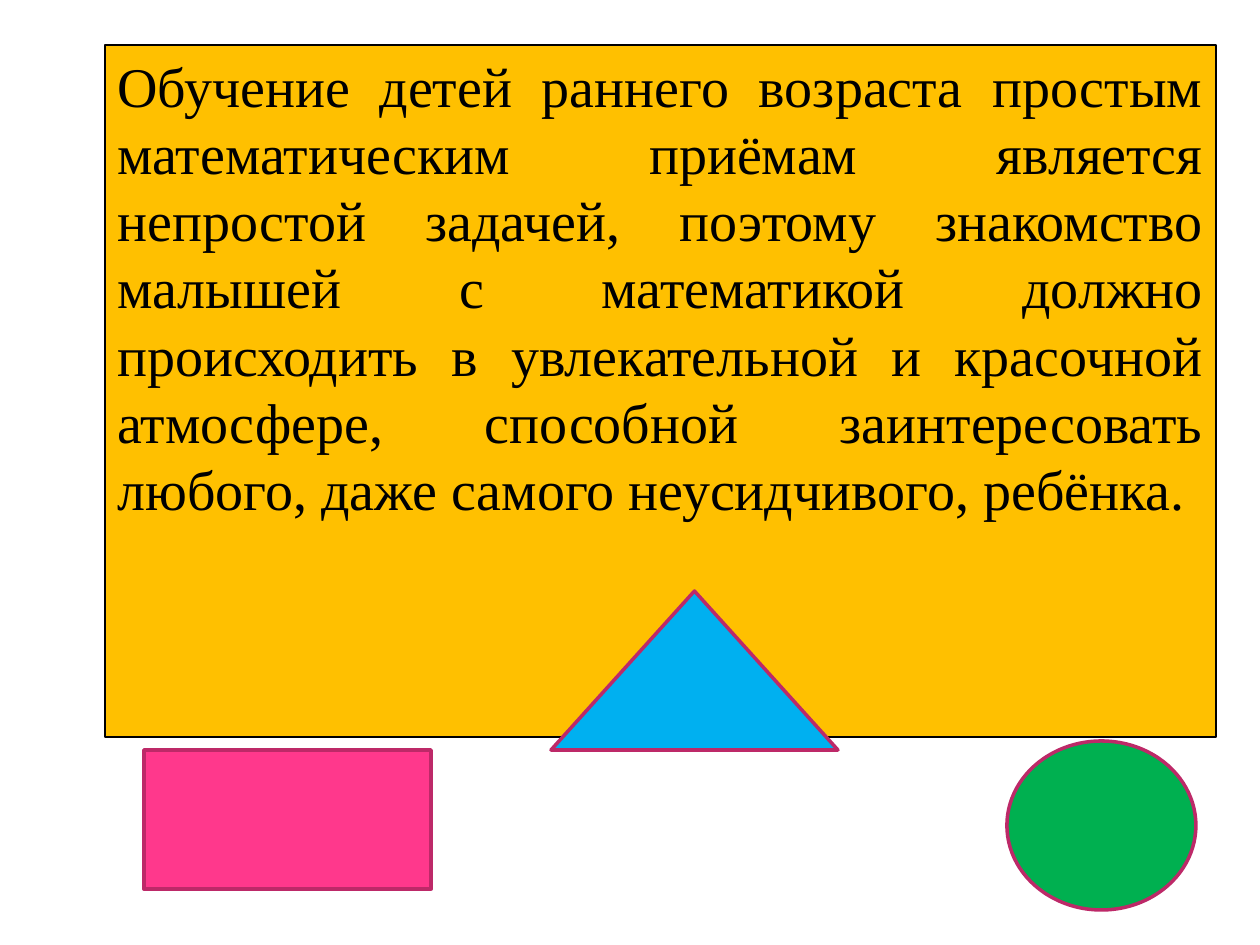
from pptx import Presentation
from pptx.dml.color import RGBColor
from pptx.enum.shapes import MSO_SHAPE
from pptx.enum.text import MSO_ANCHOR, PP_ALIGN
from pptx.util import Emu, Pt

PX = 914400 // 126
RECTANGLE = MSO_SHAPE.RECTANGLE
PROCESS = MSO_SHAPE.FLOWCHART_PROCESS
TRIANGLE = MSO_SHAPE.ISOSCELES_TRIANGLE
OVAL = MSO_SHAPE.OVAL
TOP = MSO_ANCHOR.TOP
JUSTIFY = PP_ALIGN.JUSTIFY

COLORS = {
    "panel": "FFC000",
    "ink": "000000",
    "outline": "BD2968",
    "pink": "FF388C",
    "blue": "00B0F0",
    "green": "00B050",
}
FONT = "Times New Roman"
STATEMENT = (
    "Обучение детей раннего возраста простым математическим приёмам "
    "является непростой задачей, поэтому знакомство малышей с математикой "
    "должно происходить в увлекательной и красочной атмосфере, способной "
    "заинтересовать любого, даже самого неусидчивого, ребёнка."
)
FIGURES = [
    (PROCESS, (144, 750, 287, 139), "pink"),
    (TRIANGLE, (551, 591, 287, 159), "blue"),
    (OVAL, (1007, 741, 189, 169), "green"),
]


def rgb(name):
    return RGBColor.from_string(COLORS[name])


def add_figure(slide, preset, box, fill, line="outline", weight=2):
    figure = slide.shapes.add_shape(preset, *(Emu(n * PX) for n in box))
    figure.shadow.inherit = False
    figure.fill.solid()
    figure.fill.fore_color.rgb = rgb(fill)
    figure.line.color.rgb = rgb(line)
    figure.line.width = Pt(weight)
    return figure


def add_statement(slide, box, text):
    panel = add_figure(slide, RECTANGLE, box, "panel", "ink", 0.75)
    frame = panel.text_frame
    frame.word_wrap = True
    frame.vertical_anchor = TOP
    paragraph = frame.paragraphs[0]
    paragraph.alignment = JUSTIFY
    run = paragraph.add_run()
    run.text = text
    run.font.name = FONT
    run.font.size = Pt(32)
    run.font.color.rgb = rgb("ink")


def main():
    prs = Presentation()
    prs.slide_width = Emu(1260 * PX)
    prs.slide_height = Emu(945 * PX)
    slide = prs.slides.add_slide(prs.slide_layouts[6])
    add_statement(slide, (105, 45, 1111, 692), STATEMENT)
    for preset, box, fill in FIGURES:
        add_figure(slide, preset, box, fill)
    prs.save("out.pptx")


if __name__ == "__main__":
    main()
